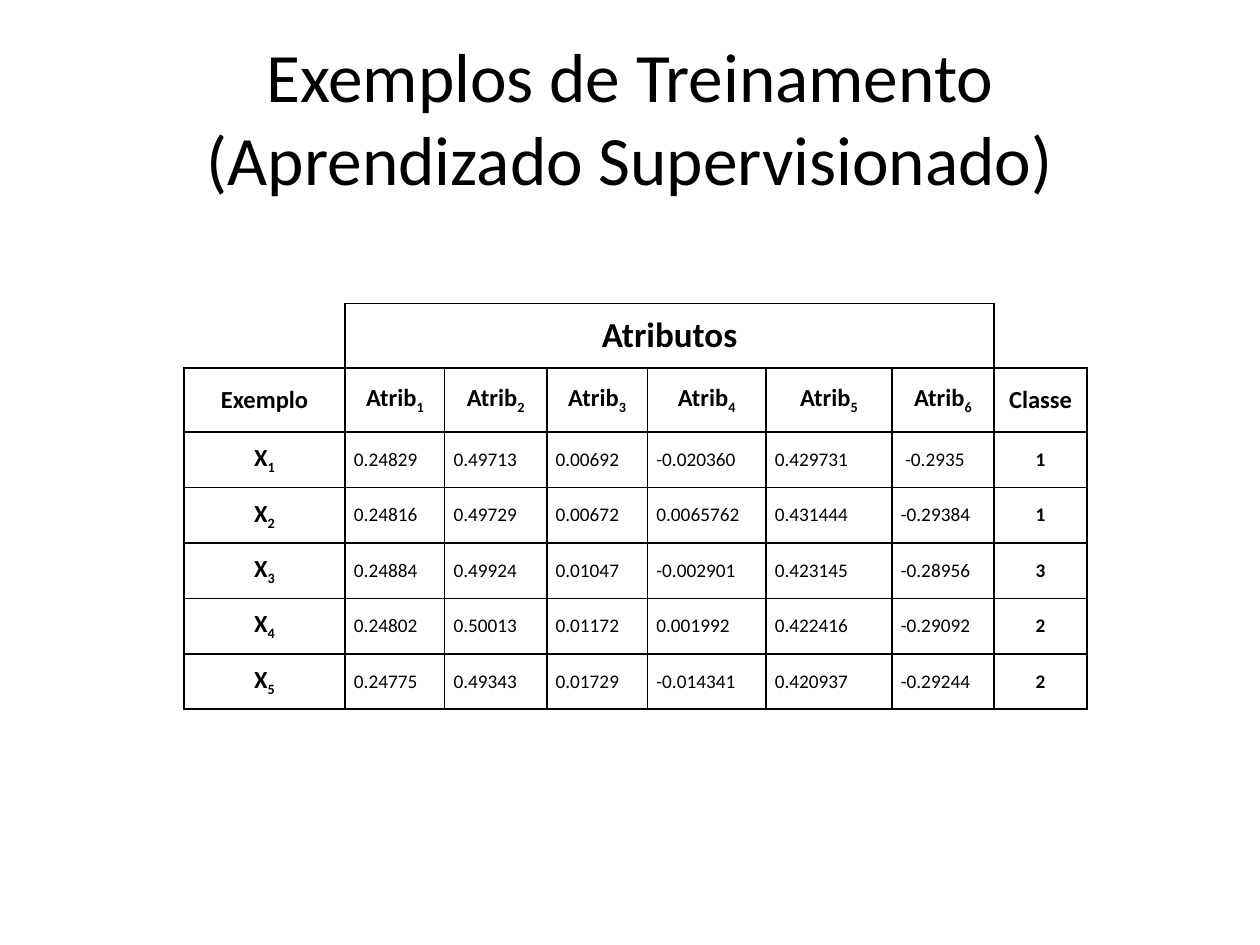
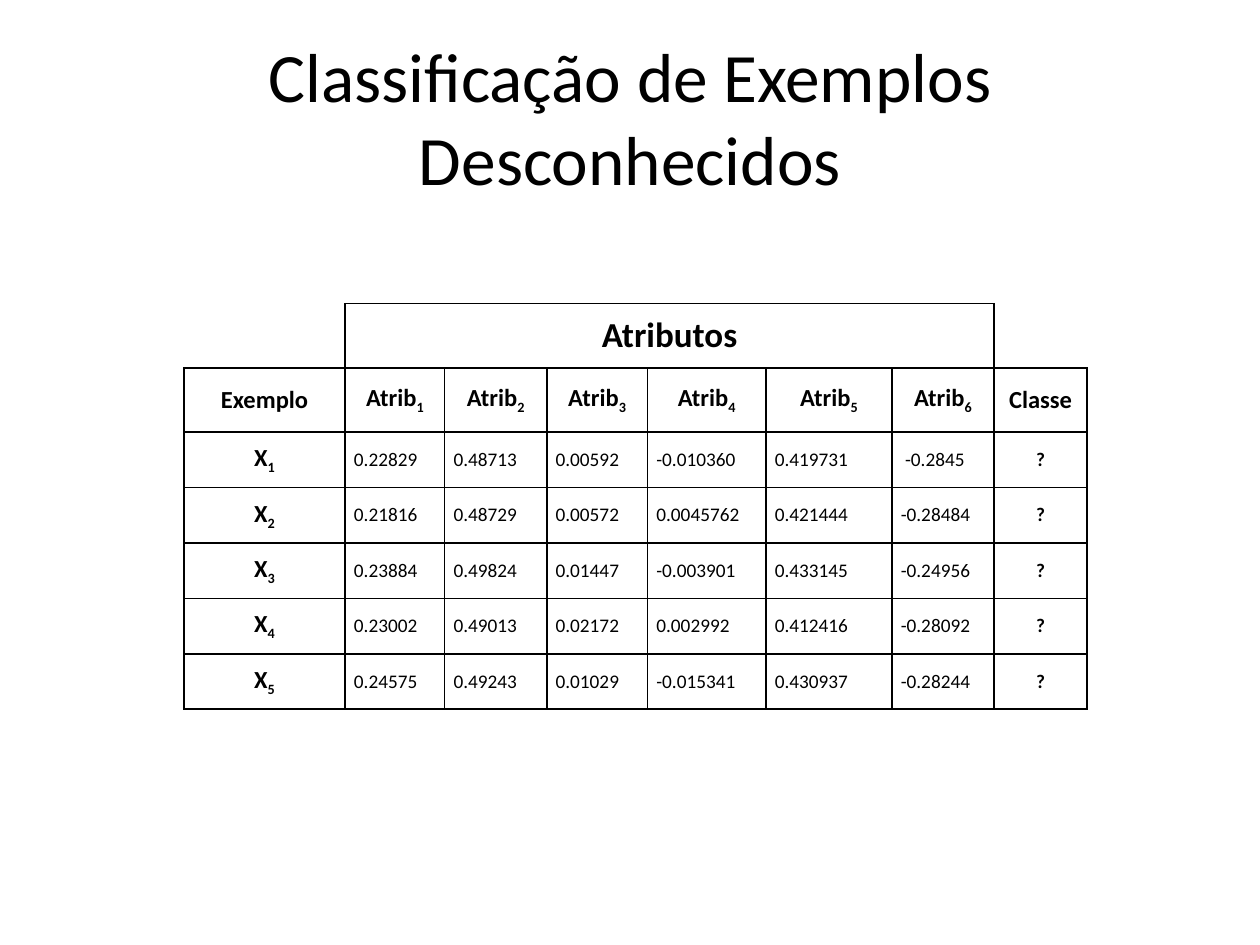
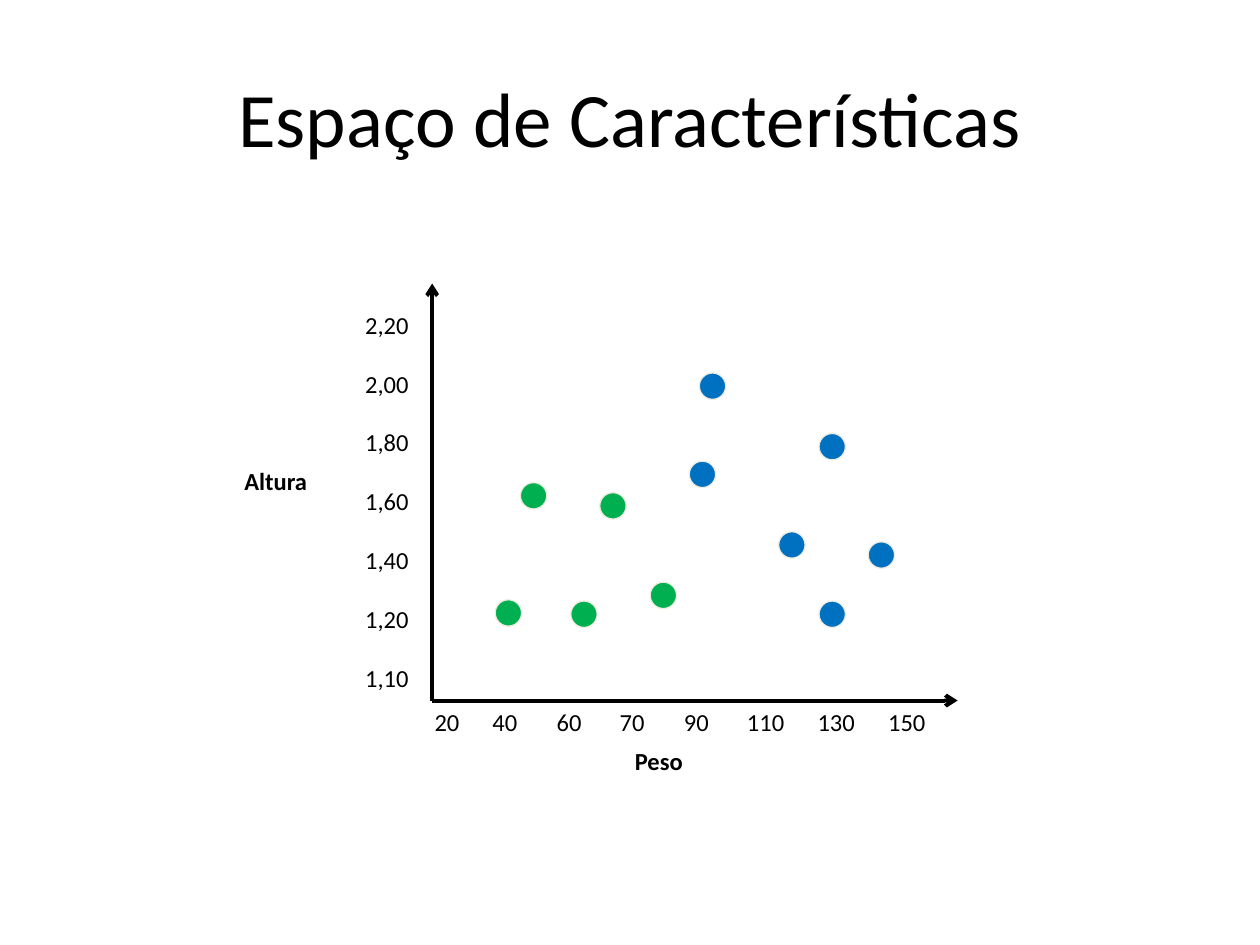
import pptx
import pptx.dml.color
import pptx.enum.shapes
import pptx.enum.text
import pptx.oxml
import pptx.oxml.ns
import pptx.util

Inches, Pt = pptx.util.Inches, pptx.util.Pt
RGBColor = pptx.dml.color.RGBColor
CENTER = pptx.enum.text.PP_ALIGN.CENTER
MIDDLE = pptx.enum.text.MSO_ANCHOR.MIDDLE
SHAPES = pptx.enum.shapes

BLACK = RGBColor(0, 0, 0)
BLUE = RGBColor(0x00, 0x70, 0xC0)
GREEN = RGBColor(0x00, 0xB0, 0x50)
CREAM = RGBColor(0xEE, 0xEC, 0xE1)
FONT = "Calibri"

TABLES = [
    (["Exemplos de Treinamento", "(Aprendizado Supervisionado)"], [
        ["0.24829", "0.49713", "0.00692", "-0.020360", "0.429731", " -0.2935", "1"],
        ["0.24816", "0.49729", "0.00672", "0.0065762", "0.431444", "-0.29384", "1"],
        ["0.24884", "0.49924", "0.01047", "-0.002901", "0.423145", "-0.28956", "3"],
        ["0.24802", "0.50013", "0.01172", "0.001992", "0.422416", "-0.29092", "2"],
        ["0.24775", "0.49343", "0.01729", "-0.014341", "0.420937", "-0.29244", "2"],
    ]),
    (["Classificação de Exemplos Desconhecidos"], [
        ["0.22829", "0.48713", "0.00592", "-0.010360", "0.419731", " -0.2845", "?"],
        ["0.21816", "0.48729", "0.00572", "0.0045762", "0.421444", "-0.28484", "?"],
        ["0.23884", "0.49824", "0.01447", "-0.003901", "0.433145", "-0.24956", "?"],
        ["0.23002", "0.49013", "0.02172", "0.002992", "0.412416", "-0.28092", "?"],
        ["0.24575", "0.49243", "0.01029", "-0.015341", "0.430937", "-0.28244", "?"],
    ]),
]
COL_WIDTHS = [1.28, 0.79, 0.81, 0.8, 0.94, 1, 0.81, 0.74]
ROW_HEIGHTS = [0.51] * 2 + [0.44] * 5
LAST = len(COL_WIDTHS) - 1

# Left and top of each dot on the plane, in inches
DOTS = {
    BLUE: [(5.47, 3.66), (6.18, 4.22), (6.89, 4.3), (5.55, 2.96), (6.5, 3.44), (6.5, 4.77)],
    GREEN: [(3.93, 4.76), (4.76, 3.91), (4.53, 4.77), (4.13, 3.83), (5.16, 4.62)],
}
DOT_SIZE = 0.21
ORIGIN = (3.43, 5.56)
AXIS_ENDS = [(7.6, 5.56), (3.43, 2.25)]
HEIGHTS = ["2,20", "2,00", "1,80", "1,60", "1,40", "1,20", "1,10"]
WEIGHTS = ["20", "40", "60", "70", "90", "110", "130", "150"]
WEIGHT_TABS = [0.46, 0.97, 1.47, 1.98, 2.48, 3.04, 3.6]


def add_run(p, text, size, bold=False, subscript=False):
    r = p.add_run()
    r.text = text
    r.font.name, r.font.size, r.font.bold = FONT, Pt(size), bold
    r.font.color.rgb = BLACK
    if subscript:
        r._r.get_or_add_rPr().set("baseline", "-25000")


def add_titled_slide(prs, lines, size):
    s = prs.slides.add_slide(prs.slide_layouts[5])
    sp = s.shapes.title
    sp.left, sp.top, sp.width, sp.height = map(Inches, (0.5, 0.3, 9, 1.25))
    tf = sp.text_frame
    tf.auto_size = pptx.enum.text.MSO_AUTO_SIZE.NONE
    tf.vertical_anchor = MIDDLE
    p = tf.paragraphs[0]
    p.alignment = CENTER
    for i, line in enumerate(lines):
        if i:
            p.add_line_break()
        add_run(p, line, size)
    return s


def set_borders(cell, visible):
    """Draw the sides named in visible (of L, R, T, B) and hide the others."""
    tc_pr = cell._tc.get_or_add_tcPr()
    ns = pptx.oxml.ns.nsdecls("a")
    for side in "LRTB":
        fill = (f'<a:solidFill><a:srgbClr val="{BLACK}"/></a:solidFill>'
                if side in visible else "<a:noFill/>")
        tc_pr.append(pptx.oxml.parse_xml(f'<a:ln{side} {ns} w="12700">{fill}</a:ln{side}>'))
    cell.fill.background()


def fill_cell(cell, text, size, subscript="", bold=True, centred=True):
    p = cell.text_frame.paragraphs[0]
    if centred:
        p.alignment = CENTER
    add_run(p, text, size, bold)
    if subscript:
        add_run(p, subscript, size, bold, subscript=True)


def add_examples_table(s, rows):
    frame = s.shapes.add_table(len(ROW_HEIGHTS), len(COL_WIDTHS), Inches(1.46), Inches(2.41),
                               Inches(sum(COL_WIDTHS)), Inches(sum(ROW_HEIGHTS)))
    table = frame.table
    table.first_row = table.horz_banding = False
    for col, width in zip(table.columns, COL_WIDTHS):
        col.width = Inches(width)
    for row, height in zip(table.rows, ROW_HEIGHTS):
        row.height = Inches(height)
    corners = {(0, 0): "RB", (0, LAST): "LB"}
    for i, row in enumerate(table.rows):
        for j, cell in enumerate(row.cells):
            cell.margin_left = cell.margin_right = Inches(0.07)
            cell.margin_top = cell.margin_bottom = 0
            cell.vertical_anchor = MIDDLE
            set_borders(cell, corners.get((i, j), "LRTB"))
    table.cell(0, 1).merge(table.cell(0, LAST - 1))
    fill_cell(table.cell(0, 1), "Atributos", 20)
    fill_cell(table.cell(1, 0), "Exemplo", 14)
    for j in range(1, LAST):
        fill_cell(table.cell(1, j), "Atrib", 14, str(j))
    fill_cell(table.cell(1, LAST), "Classe", 14)
    for i, values in enumerate(rows, 1):
        fill_cell(table.cell(i + 1, 0), "X", 14, str(i))
        for j, value in enumerate(values, 1):
            is_class = j == LAST
            fill_cell(table.cell(i + 1, j), value, 11, bold=is_class, centred=is_class)


def add_label(s, box, lines, bold=False, wrap=True, gap=0):
    tf = s.shapes.add_textbox(*map(Inches, box)).text_frame
    tf.word_wrap = wrap
    for i, line in enumerate(lines):
        p = tf.add_paragraph() if i else tf.paragraphs[0]
        if i:
            p.space_before = Pt(gap)
        add_run(p, line, 14, bold)
    return tf


def add_tabs(p, stops):
    tabs = "".join(f'<a:tab pos="{Inches(x)}" algn="l"/>' for x in stops)
    p._p.get_or_add_pPr().append(pptx.oxml.parse_xml(
        f'<a:tabLst {pptx.oxml.ns.nsdecls("a")}>{tabs}</a:tabLst>'))


def add_axis(s, end):
    c = s.shapes.add_connector(SHAPES.MSO_CONNECTOR.STRAIGHT, *map(Inches, ORIGIN + end))
    c.line.color.rgb, c.line.width = BLACK, Pt(2.25)
    ns = pptx.oxml.ns.nsdecls("a")
    c.line._get_or_add_ln().append(pptx.oxml.parse_xml(f'<a:tailEnd {ns} type="arrow"/>'))
    c._element.spPr.append(pptx.oxml.parse_xml(f"<a:effectLst {ns}/>"))


def add_dot(s, x, y, color):
    sp = s.shapes.add_shape(SHAPES.MSO_SHAPE.OVAL, *map(Inches, (x, y, DOT_SIZE, DOT_SIZE)))
    sp.shadow.inherit = False
    sp.fill.solid()
    sp.fill.fore_color.rgb = color
    sp.line.color.rgb, sp.line.width = CREAM, Pt(0.75)


def add_feature_space(s):
    for color, places in DOTS.items():
        for x, y in places:
            add_dot(s, x, y, color)
    for end in AXIS_ENDS:
        add_axis(s, end)
    add_label(s, (1.84, 3.65, 0.88, 0.34), ["Altura"], bold=True, wrap=False)
    add_label(s, (4.94, 5.87, 0.73, 0.34), ["Peso"], bold=True, wrap=False)
    tf = add_label(s, (3.35, 5.56, 4.65, 0.34), ["\t".join(WEIGHTS)])
    add_tabs(tf.paragraphs[0], WEIGHT_TABS)
    add_label(s, (2.8, 2.41, 0.79, 3.16), HEIGHTS, gap=16.8)


def main():
    prs = pptx.Presentation()
    prs.slide_width, prs.slide_height = Inches(10), Inches(7.5)
    for title, rows in TABLES:
        add_examples_table(add_titled_slide(prs, title, 39.6), rows)
    add_feature_space(add_titled_slide(prs, ["Espaço de Características"], 44))
    prs.save("out.pptx")


if __name__ == "__main__":
    main()
